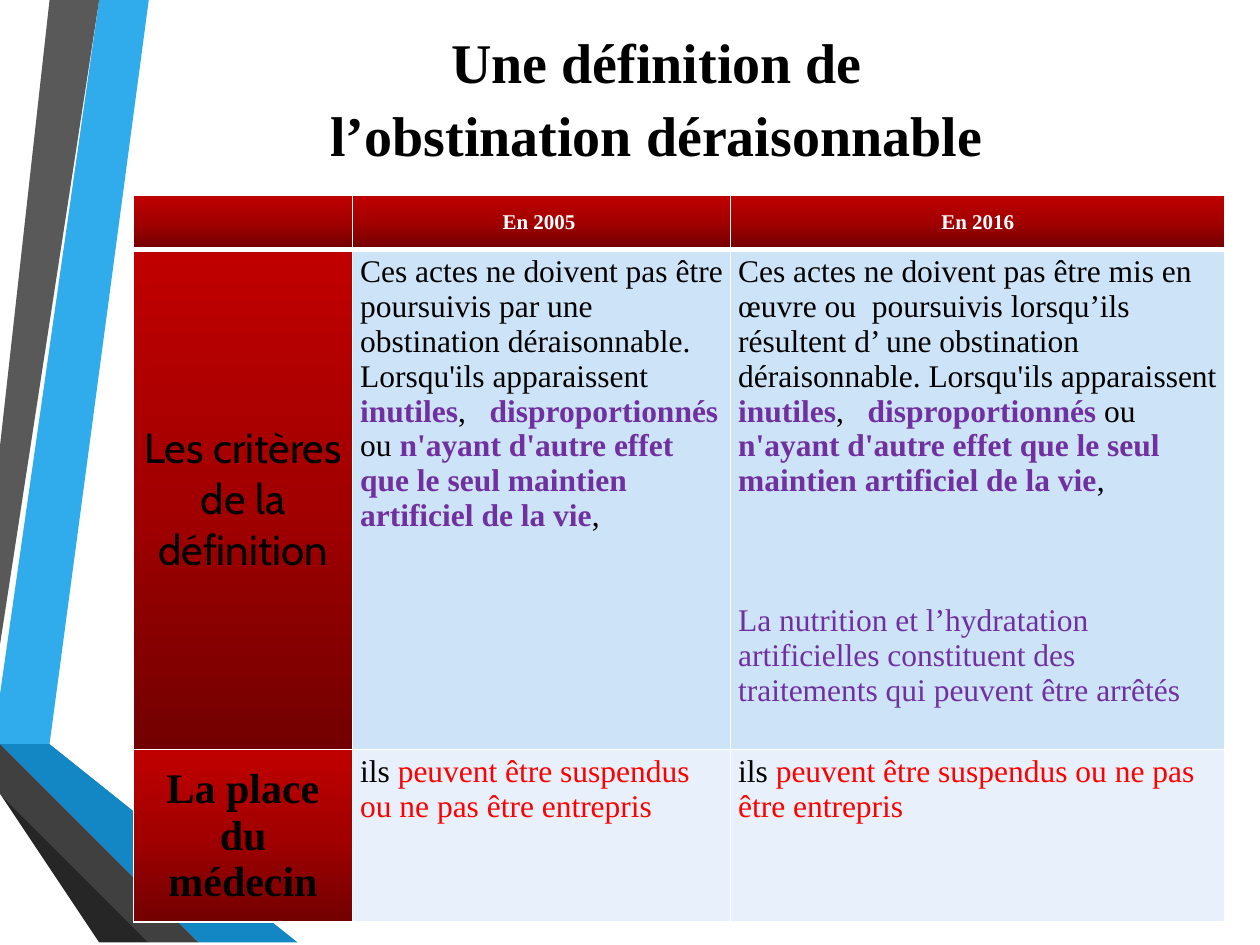
from lxml import etree
from pptx import Presentation
from pptx import util as u
from pptx.dml.color import RGBColor
from pptx.enum import text as t

Cm, Pt = u.Cm, u.Pt
NS = "http://schemas.openxmlformats.org/drawingml/2006/main"
BLACK = RGBColor(0x00, 0x00, 0x00)
WHITE = RGBColor(0xFF, 0xFF, 0xFF)
RED = RGBColor(0xFF, 0x00, 0x00)
PURPLE = RGBColor(0x70, 0x30, 0xA0)
SKY = RGBColor(0x30, 0xAC, 0xEC)
BLUE = RGBColor(0x12, 0x87, 0xC3)
NAVY = RGBColor(0x0C, 0x5A, 0x82)
GREY = RGBColor(0x59, 0x59, 0x59)
DARK = RGBColor(0x40, 0x40, 0x40)
COAL = RGBColor(0x26, 0x26, 0x26)
PALE = RGBColor(0xCD, 0xE3, 0xF8)
LIGHT = RGBColor(0xE8, 0xF1, 0xFB)
RAMP = [(0, RGBColor(0x72, 0, 0)), (50, RGBColor(0xA2, 0, 0)), (100, RGBColor(0xC0, 0, 0))]
SERIF = "Times New Roman"
MID = t.PP_ALIGN.CENTER

# Side bands, corner points in cm, back to front
BANDS = [
    (SKY, [(0, 13.82), (0, 14.61), (0.56, 14.71), (2.97, 0), (2.26, 0)]),
    (GREY, [(2.11, 0), (1.4, 0), (0, 8.53), (0, 12.85)]),
    (COAL, [(0, 15.72), (0, 15.77), (2.36, 19.05), (2.51, 19.05)]),
    (NAVY, [(0, 14.71), (0, 14.73), (3.96, 19.05), (4.14, 19.05)]),
    (BLUE, [(0, 14.71), (4.14, 19.05), (5.92, 19.05), (0.56, 14.71), (0, 14.61)]),
    (DARK, [(0, 15.72), (2.51, 19.05), (3.84, 19.05), (0, 14.88)]),
]

# Runs are (text, colour, bold)
GOALS = [
    ("inutiles", PURPLE, True), (",   ", BLACK, False),
    ("disproportionnés", PURPLE, True), (" ou ", BLACK, False),
    ("n'ayant d'autre effet que le seul maintien artificiel de la vie", PURPLE, True),
    (",", BLACK, False),
]
OLD = ("Ces actes ne doivent pas être poursuivis par une obstination déraisonnable. "
       "Lorsqu'ils apparaissent ")
NEW = ("Ces actes ne doivent pas être mis en œuvre ou  poursuivis lorsqu’ils résultent "
       "d’ une obstination déraisonnable. Lorsqu'ils apparaissent ")
FOOD = ("La nutrition et l’hydratation artificielles constituent des traitements "
        "qui peuvent être arrêtés")
STOP = [("ils ", BLACK, False),
        ("peuvent être suspendus ou ne pas être entrepris", RED, False)]


def write(para, runs, size=18, font=SERIF, align=None, before=0, lead=None):
    para.alignment = align
    para.space_before = Pt(before)
    if lead:
        para.line_spacing = lead
    for words, color, bold in runs:
        run = para.add_run()
        run.text = words
        run.font.size, run.font.name, run.font.bold = Pt(size), font, bold
        run.font.color.rgb = color


def band(slide, color, points):
    form = slide.shapes.build_freeform(*points[0], scale=Cm(1))
    form.add_line_segments(points[1:], close=True)
    shape = form.convert_to_shape()
    shape.shadow.inherit = False
    shape.fill.solid()
    shape.fill.fore_color.rgb = color
    shape.line.fill.background()


def title(slide):
    frame = slide.shapes.add_textbox(Cm(5.94), Cm(0.33), Cm(14.6), Cm(3)).text_frame
    frame.word_wrap = True
    write(frame.paragraphs[0],
          [("Une définition de l’obstination déraisonnable", BLACK, True)],
          size=32, align=MID, lead=1.08)


def shade(cell, color=None):
    """Fill a cell with one colour, or with the red ramp."""
    if color is not None:
        cell.fill.solid()
        cell.fill.fore_color.rgb = color
        return
    stops = "".join(f'<a:gs pos="{pos * 1000}"><a:srgbClr val="{rgb}"/></a:gs>'
                    for pos, rgb in RAMP)
    cell._tc.get_or_add_tcPr().append(etree.fromstring(
        f'<a:gradFill xmlns:a="{NS}" rotWithShape="1"><a:gsLst>{stops}</a:gsLst>'
        '<a:lin ang="16200000" scaled="0"/></a:gradFill>'))


def edge(cell, base=1):
    for i, side in enumerate("LRTB"):
        width = Pt(base if side == "B" else 1)
        cell._tc.get_or_add_tcPr().insert(i, etree.fromstring(
            f'<a:ln{side} xmlns:a="{NS}" w="{width}"><a:solidFill>'
            f'<a:srgbClr val="{WHITE}"/></a:solidFill></a:ln{side}>'))


def grid(slide):
    wide, high = [4.42, 7.62, 9.96], [1.09, 10.08, 3.48]
    table = slide.shapes.add_table(3, 3, Cm(2.69), Cm(3.94),
                                   Cm(sum(wide)), Cm(sum(high))).table
    for col, size in zip(table.columns, wide):
        col.width = Cm(size)
    for row, size in zip(table.rows, high):
        row.height = Cm(size)

    # Cell frames: red for the heads, blue tints for the body
    for r, row in enumerate(table.rows):
        for c, cell in enumerate(row.cells):
            head = r == 0 or c == 0
            cell.margin_left = cell.margin_right = Cm(0.15)
            cell.margin_top = cell.margin_bottom = Cm(0.1)
            cell.vertical_anchor = t.MSO_ANCHOR.MIDDLE if head else t.MSO_ANCHOR.TOP
            shade(cell, None if head else (PALE, LIGHT)[r - 1])
            edge(cell, 3 if r == 0 else 1)

    def put(r, c, runs, **style):
        write(table.cell(r, c).text_frame.paragraphs[0], runs, **style)

    # Heads
    put(0, 1, [("En 2005 ", WHITE, True)], size=12, align=MID)
    put(0, 2, [("En 2016", WHITE, True)], size=12, align=MID)
    put(1, 0, [("Les critères de la définition", BLACK, False)],
        size=24, font="Cabin", align=MID)
    put(2, 0, [("La place du médecin", BLACK, True)], size=24, align=MID)

    # Body
    for c, intro in enumerate((OLD, NEW), 1):
        put(1, c, [(intro, BLACK, False)] + GOALS)
        put(2, c, STOP)
    write(table.cell(1, 2).text_frame.add_paragraph(), [(FOOD, PURPLE, False)], before=60)


def main():
    deck = Presentation()
    deck.slide_width, deck.slide_height = Cm(25.4), Cm(19.05)
    slide = deck.slides.add_slide(deck.slide_layouts[6])
    for color, points in BANDS:
        band(slide, color, points)
    title(slide)
    grid(slide)
    deck.save("out.pptx")


if __name__ == "__main__":
    main()
